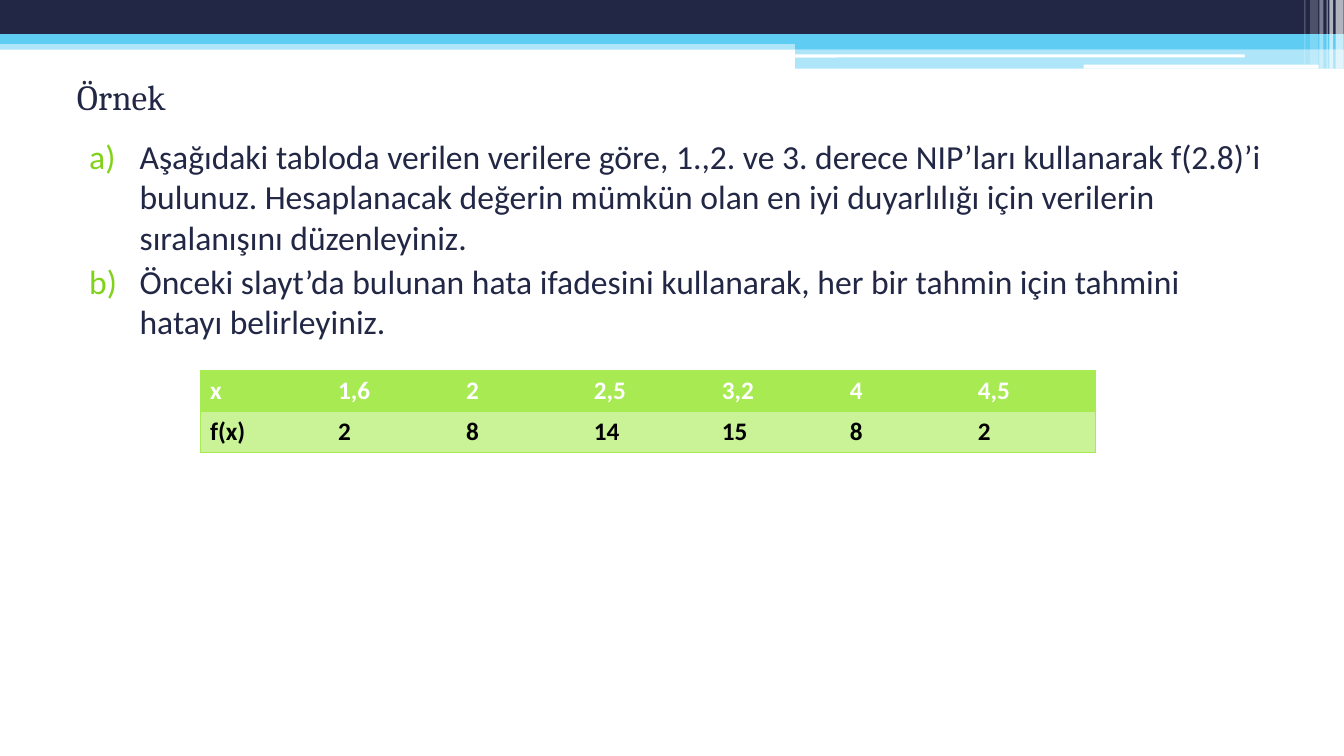
from lxml.etree import SubElement
from pptx import Presentation
from pptx.dml.color import RGBColor
from pptx.enum.shapes import MSO_SHAPE
from pptx.enum.text import MSO_ANCHOR
from pptx.oxml import parse_xml
from pptx.oxml.ns import nsdecls, qn
from pptx.util import Cm, Pt

NAVY, SKY, WHITE = "212745", "5ECCF3", "FFFFFF"
GREEN, PALE, BULLET = "A7EA52", "CAF297", "81D31A"
WIDTH, HEIGHT = 33.87, 19.05
PLAIN_TABLE = "{2D5ABB26-0587-4C30-8999-92F81FD0307C}"

BANDS = [
    (0, 1.02, WIDTH, 0.23, SKY, 50),
    (0, 0, WIDTH, 0.86, NAVY, 100),
    (0, 0.86, WIDTH, 0.25, SKY, 100),
    (20.04, 0.99, 13.83, 0.25, SKY, 100),
    (20.04, 1.22, 13.83, 0.51, SKY, 50),
]
SLITS = [(20.02, 1.37, 11.35, 0.08), (27.31, 1.63, 5.92, 0.1)]
STRIPES = [
    (33.66, 0.2, 1.73, 65),
    (33.5, 0.1, 1.73, 65),
    (33.43, 0.03, 1.73, 60),
    (33.25, 0.1, 1.73, 40),
    (33.02, 0.2, 1.63, 20),
    (32.87, 0.03, 1.63, 30),
]
TASKS = [
    "Aşağıdaki tabloda verilen verilere göre, 1.,2. ve 3. derece NIP’ları kullanarak f(2.8)’i "
    "bulunuz. Hesaplanacak değerin mümkün olan en iyi duyarlılığı için verilerin sıralanışını "
    "düzenleyiniz.",
    "Önceki slayt’da bulunan hata ifadesini kullanarak, her bir tahmin için tahmini hatayı "
    "belirleyiniz.",
]
VALUES = [
    ["x", "1,6", "2", "2,5", "3,2", "4", "4,5"],
    ["f(x)", "2", "8", "14", "15", "8", "2"],
]


def color(code):
    return RGBColor.from_string(code)


def write(para, text, name, size, code, bold=False):
    span = para.add_run()
    span.text = text
    span.font.color.rgb = color(code)
    for key, value in {"name": name, "size": Pt(size), "bold": bold}.items():
        setattr(span.font, key, value)


def add_bar(page, kind, box, code, opacity=100):
    bar = page.shapes.add_shape(kind, *map(Cm, box))
    bar.shadow.inherit = False
    bar.line.fill.background()
    bar.fill.solid()
    bar.fill.fore_color.rgb = color(code)
    if opacity < 100:
        tint = next(bar.element.iter(qn("a:srgbClr")))
        SubElement(tint, qn("a:alpha"), val=str(opacity * 1000))


def add_banner(page, left, top):
    for x, y, width, height, code, opacity in BANDS:
        add_bar(page, MSO_SHAPE.RECTANGLE, (left + x, top + y, width, height), code, opacity)
    for x, y, width, height in SLITS:
        add_bar(page, MSO_SHAPE.ROUNDED_RECTANGLE, (left + x, top + y, width, height), WHITE)
    for x, width, height, opacity in STRIPES:
        add_bar(page, MSO_SHAPE.RECTANGLE, (left + x, top, width, height), WHITE, opacity)


def add_text_frame(page, box, anchor):
    frame = page.shapes.add_textbox(*map(Cm, box)).text_frame
    for key, value in {"word_wrap": True, "vertical_anchor": anchor}.items():
        setattr(frame, key, value)
    return frame


def add_title(page, box, text):
    frame = add_text_frame(page, box, MSO_ANCHOR.MIDDLE)
    write(frame.paragraphs[0], text, "Cambria", 25.2, NAVY)


def add_tasks(page, box, tasks):
    frame = add_text_frame(page, box, MSO_ANCHOR.TOP)
    for index, task in enumerate(tasks):
        para = frame.add_paragraph() if index else frame.paragraphs[0]
        para.space_before = Pt(3)
        write(para, task, "Calibri", 24, NAVY)
        layout = para._p.get_or_add_pPr()
        layout.set("marL", str(Cm(1.58)))
        layout.set("indent", str(Cm(-1.27)))
        tint = SubElement(layout, qn("a:buClr"))
        SubElement(tint, qn("a:srgbClr"), val=BULLET)
        SubElement(layout, qn("a:buFont"), typeface="+mj-lt")
        SubElement(layout, qn("a:buAutoNum"), type="alphaLcParenR")


def add_borders(cell, sides):
    for index, side in enumerate(sides):
        line = parse_xml(
            f'<a:ln{side} {nsdecls("a")} w="6350"><a:solidFill>'
            f'<a:srgbClr val="{GREEN}"/></a:solidFill></a:ln{side}>'
        )
        cell._tc.get_or_add_tcPr().insert(index, line)


def add_values(page, box, values):
    left, top, width, height = box
    rows, columns = len(values), len(values[0])
    holder = page.shapes.add_table(rows, columns, *map(Cm, box))
    next(holder.element.iter(qn("a:tableStyleId"))).text = PLAIN_TABLE
    table = holder.table
    table.horz_banding = False
    for column in table.columns:
        column.width = Cm(width / columns)
    for row in table.rows:
        row.height = Cm(height / rows)
    for r, (fill, ink) in enumerate([(GREEN, WHITE), (PALE, "000000")]):
        for c, text in enumerate(values[r]):
            cell = table.cell(r, c)
            cell.fill.solid()
            cell.fill.fore_color.rgb = color(fill)
            write(cell.text_frame.paragraphs[0], text, "Calibri", 18, ink, True)
            edges = {"L": c == 0, "R": c == columns - 1, "T": True, "B": r == rows - 1}
            add_borders(cell, [side for side, shown in edges.items() if shown])


def main():
    deck = Presentation()
    deck.slide_width, deck.slide_height = Cm(WIDTH), Cm(HEIGHT)
    page = deck.slides.add_slide(deck.slide_layouts[6])
    add_banner(page, 0, 0)
    add_title(page, (1.69, 1.73, 30.48, 1.4), "Örnek")
    add_tasks(page, (1.69, 3.3, 30.48, 14.96), TASKS)
    add_values(page, (5.04, 9.34, 22.58, 2.06), VALUES)
    deck.save("out.pptx")


if __name__ == "__main__":
    main()
